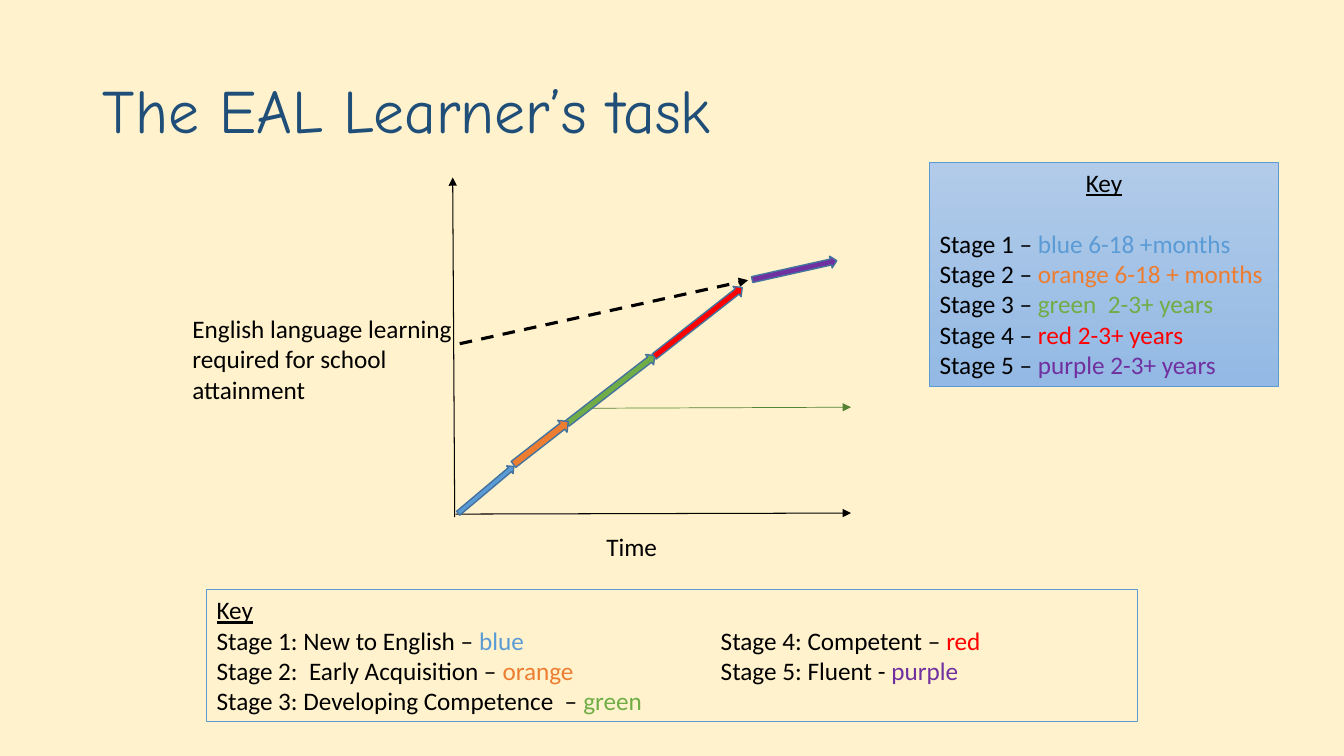
from pptx import Presentation
from pptx.dml.color import RGBColor
from pptx.enum.dml import MSO_LINE
from pptx.enum.shapes import MSO_CONNECTOR, MSO_SHAPE
from pptx.enum.text import MSO_ANCHOR, PP_ALIGN
from pptx.oxml.ns import qn
from pptx.util import Inches, Pt
from lxml.etree import SubElement

BLACK, BLUE, ORANGE = "000000", "5B9BD5", "ED7D31"
GREEN, RED, PURPLE = "70AD47", "FF0000", "7030A0"
color = RGBColor.from_string


def add_run(paragraph, text, hex_color=BLACK, size=18, font="Calibri", underline=None):
    run = paragraph.add_run()
    run.text = text
    run.font.size = Pt(size)
    run.font.name = font
    run.font.underline = underline
    run.font.color.rgb = color(hex_color)


def add_box(left, top, width, height):
    box = slide.shapes.add_shape(
        MSO_SHAPE.RECTANGLE, Inches(left), Inches(top), Inches(width), Inches(height))
    box.shadow.inherit = False
    box.line.color.rgb = color(BLUE)
    box.line.width = Pt(0.5)
    box.text_frame.word_wrap = True
    box.text_frame.vertical_anchor = MSO_ANCHOR.TOP
    add_run(box.text_frame.paragraphs[0], "Key", underline=True)
    return box


presentation = Presentation()
presentation.slide_width = Inches(13.33)
presentation.slide_height = Inches(7.5)
slide = presentation.slides.add_slide(presentation.slide_layouts[5])
slide.background.fill.solid()
slide.background.fill.fore_color.rgb = color("FFF2CC")

# Title
title = slide.shapes.title
title.left, title.top = Inches(0.92), Inches(0.4)
title.width, title.height = Inches(11.5), Inches(1.45)
title.text_frame.vertical_anchor = MSO_ANCHOR.MIDDLE
paragraph = title.text_frame.paragraphs[0]
paragraph.alignment = PP_ALIGN.LEFT
paragraph.line_spacing = 0.9
add_run(paragraph, "The EAL Learner’s task", "1F4E79", 44, "Comic Neue")

# Axes, attainment line and plateau line
for x1, y1, x2, y2, hex_color, width, dash in [
    (4.56, 3.41, 7.42, 2.78, BLACK, 2.25, MSO_LINE.DASH),
    (5.87, 4.05, 8.44, 4.04, "548235", 0.5, None),
    (4.52, 5.1, 8.44, 5.09, BLACK, 0.75, None),
    (4.51, 5.13, 4.49, 1.76, BLACK, 0.75, None),
]:
    connector = slide.shapes.add_connector(
        MSO_CONNECTOR.STRAIGHT, Inches(x1), Inches(y1), Inches(x2), Inches(y2))
    connector.line.color.rgb = color(hex_color)
    connector.line.width = Pt(width)
    if dash:
        connector.line.dash_style = dash
    SubElement(connector.line._get_or_add_ln(), qn("a:tailEnd"), type="triangle")
    SubElement(connector._element.spPr, qn("a:effectLst"))

# Axis labels
for left, top, width, height, text, alignment in [
    (1.81, 3.06, 2.91, 1.11, "English language learning required for school attainment",
     PP_ALIGN.LEFT),
    (5.46, 5.22, 1.61, 0.4, "Time", PP_ALIGN.CENTER),
]:
    label = slide.shapes.add_textbox(
        Inches(left), Inches(top), Inches(width), Inches(height))
    label.text_frame.word_wrap = True
    paragraph = label.text_frame.paragraphs[0]
    paragraph.alignment = alignment
    add_run(paragraph, text)

# Stage arrows
for left, top, width, height, rotation, hex_color in [
    (4.46, 4.81, 0.72, 0.1, 319.9, BLUE),
    (5.51, 3.8, 1.1, 0.13, 322.2, GREEN),
    (6.37, 3.13, 1.11, 0.13, 321.9, RED),
    (7.45, 2.62, 0.86, 0.12, 347.4, PURPLE),
    (5.02, 4.32, 0.69, 0.15, 322, ORANGE),
]:
    arrow = slide.shapes.add_shape(
        MSO_SHAPE.RIGHT_ARROW, Inches(left), Inches(top), Inches(width), Inches(height))
    arrow.rotation = rotation
    arrow.shadow.inherit = False
    arrow.fill.solid()
    arrow.fill.fore_color.rgb = color(hex_color)
    arrow.line.color.rgb = color("43739E")
    arrow.line.width = Pt(1)

# Key to the stage names, in two columns
names_key = add_box(2.05, 5.85, 9.23, 1.31)
names_key.fill.background()
names_key.text_frame.paragraphs[0].alignment = PP_ALIGN.LEFT
for runs in [
    [("Stage 1: New to English – ", BLACK), ("blue\t", BLUE),
     ("Stage 4: Competent – ", BLACK), ("red", RED)],
    [("Stage 2:  Early Acquisition – ", BLACK), ("orange\t", ORANGE),
     ("Stage 5: Fluent - ", BLACK), ("purple", PURPLE)],
    [("Stage 3: Developing Competence  – ", BLACK), ("green", GREEN)],
]:
    paragraph = names_key.text_frame.add_paragraph()
    paragraph.alignment = PP_ALIGN.LEFT
    tabs = SubElement(paragraph._p.get_or_add_pPr(), qn("a:tabLst"))
    SubElement(tabs, qn("a:tab"), pos=str(Inches(5)), algn="l")
    for text, hex_color in runs:
        add_run(paragraph, text, hex_color)

# Key to the stage durations
times_key = add_box(9.22, 1.61, 3.46, 2.22)
times_key.fill.gradient()
times_key.fill.gradient_angle = 270
for stop, hex_color in zip(times_key.fill.gradient_stops, ["B1CBE9", "93B9E4"]):
    stop.color.rgb = color(hex_color)
heading = times_key.text_frame.paragraphs[0]
heading.alignment = PP_ALIGN.CENTER
heading.space_after = Pt(22)
for number, (text, hex_color) in enumerate([
    ("blue 6-18 +months", BLUE),
    ("orange 6-18 + months", ORANGE),
    ("green  2-3+ years", GREEN),
    ("red 2-3+ years", RED),
    ("purple 2-3+ years", PURPLE),
], start=1):
    paragraph = times_key.text_frame.add_paragraph()
    paragraph.alignment = PP_ALIGN.LEFT
    add_run(paragraph, f"Stage {number} – ")
    add_run(paragraph, text, hex_color)

presentation.save("out.pptx")
